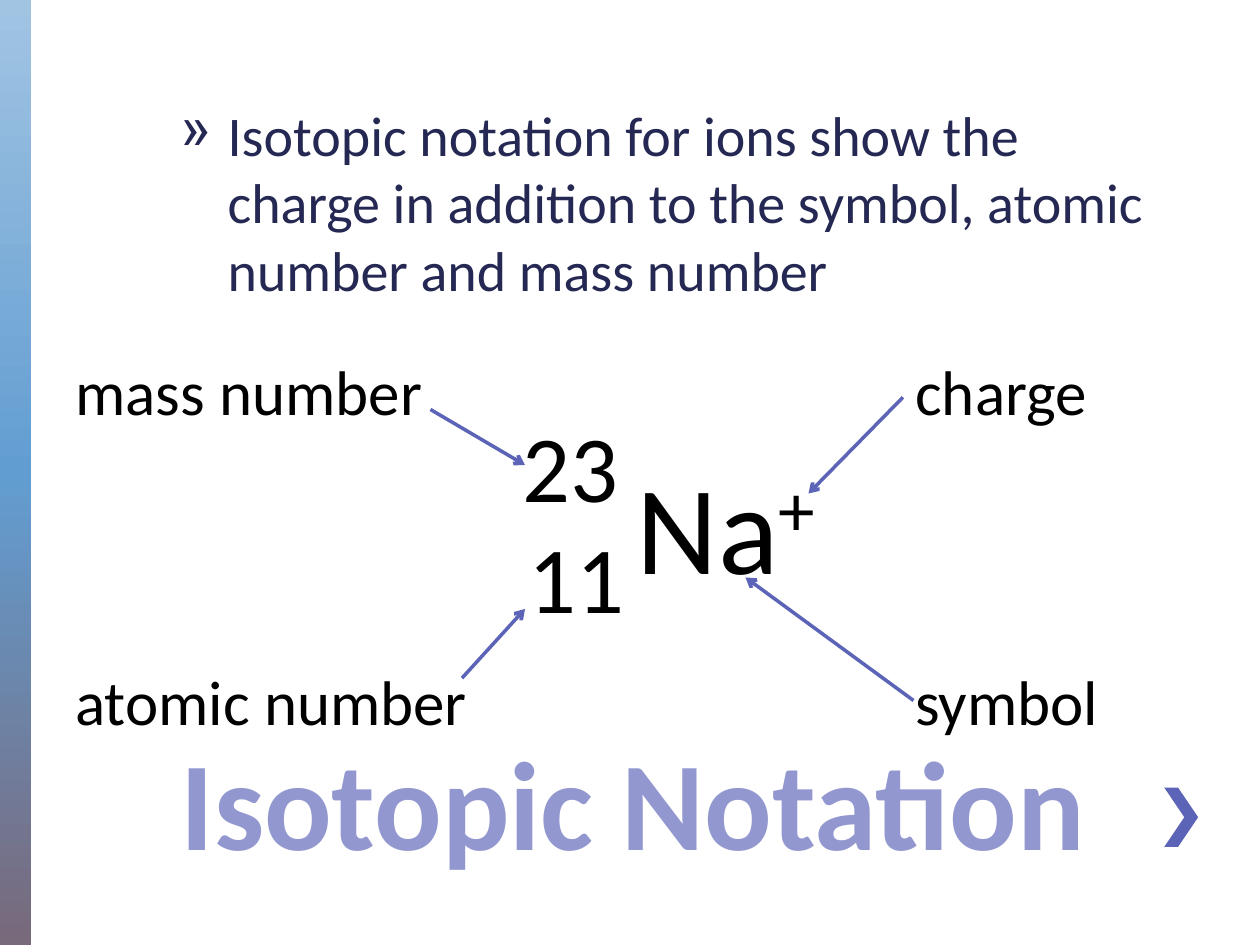
"""Build the Isotopic Notation slide for a sodium ion."""
from copy import deepcopy
from dataclasses import dataclass

from lxml import etree
from pptx import Presentation
from pptx.dml.color import RGBColor
from pptx.enum import shapes as kinds, text as styles
from pptx.oxml.ns import qn
from pptx.util import Pt


@dataclass(frozen=True)
class Theme:
    font: str = "Calibri"
    title: str = "9297CF"
    dark: str = "242852"
    accent: str = "5C64B7"
    black: str = "000000"
    bar: tuple = ((0, "A1C4E3"), (0.5, "629DD1"), (1, "78697B"))
    title_size: int = 72
    body_size: int = 32
    label_size: int = 36
    number_size: int = 54
    symbol_size: int = 72


THEME = Theme()
TITLE = "Isotopic Notation"
BODY = ("Isotopic notation for ions show the charge in addition to the symbol, "
        "atomic number and mass number")
SYMBOL, CHARGE = "Na", "+"
SYMBOL_BOX = (350, 252.7, 129.6, 94.3)
NUMBERS = [("11", (288, 293, 82.8, 72.7)), ("23", (270, 229.7, 112.3, 72.7))]

UPPER, LOWER, LEFT, RIGHT, LABEL_HEIGHT = 198, 375, 36, 516, 51
LABELS = [
    ("symbol", RIGHT, LOWER, 126),
    ("charge", RIGHT, UPPER, 126),
    ("mass number", LEFT, UPPER, 228),
    ("atomic number", LEFT, LOWER, 264),
]
ARROWS = [
    ((522, 400.3), (426, 330)),
    ((516, 227), (462, 282)),
    ((264, 387.5), (300, 348)),
    ((246, 234), (300, 265.7)),
]
CHEVRON = [(673.2, 450), (665.3, 450), (676.8, 467), (665.3, 484), (673.2, 484), (684.7, 467)]


def rgb(value):
    return RGBColor.from_string(value)


def points(values):
    return [Pt(value) for value in values]


def style(paragraph, size, color, bold=False):
    font = paragraph.font
    font.name, font.size, font.bold = THEME.font, Pt(size), bold
    font.color.rgb = rgb(color)


def add_text(shapes, words, box, size, color=THEME.black, align=styles.PP_ALIGN.LEFT,
             fit=styles.MSO_AUTO_SIZE.SHAPE_TO_FIT_TEXT):
    frame = shapes.add_textbox(*points(box)).text_frame
    frame.word_wrap, frame.auto_size = True, fit
    paragraph = frame.paragraphs[0]
    paragraph.add_run().text = words
    paragraph.alignment = align
    style(paragraph, size, color)
    return paragraph


def add_bar(slide):
    bar = slide.shapes.add_shape(kinds.MSO_SHAPE.RECTANGLE, *points((0, 0, 18, 540)))
    bar.shadow.inherit = False
    bar.line.fill.background()
    bar.fill.gradient()
    bar.fill.gradient_angle = 270
    stop_list = bar._element.spPr.find(qn("a:gradFill")).find(qn("a:gsLst"))
    stop_list.append(deepcopy(stop_list[0]))
    for stop, (position, color) in zip(bar.fill.gradient_stops, THEME.bar):
        stop.position, stop.color.rgb = position, rgb(color)


def add_chevron(slide):
    start, *rest = [points(corner) for corner in CHEVRON]
    builder = slide.shapes.build_freeform(*start, scale=1.0)
    builder.add_line_segments(rest, close=True)
    chevron = builder.convert_to_shape()
    chevron.shadow.inherit = False
    chevron.fill.solid()
    chevron.fill.fore_color.rgb = rgb(THEME.accent)
    chevron.line.fill.background()


def add_title(slide):
    title = slide.shapes.title
    title.left, title.top, title.width, title.height = points((96, 414, 570, 90))
    frame = title.text_frame
    frame.text = TITLE
    frame.word_wrap, frame.auto_size = True, styles.MSO_AUTO_SIZE.NONE
    frame.vertical_anchor = styles.MSO_ANCHOR.BOTTOM
    paragraph = frame.paragraphs[0]
    paragraph.alignment = styles.PP_ALIGN.LEFT
    style(paragraph, THEME.title_size, THEME.title, bold=True)
    outline = etree.Element(qn("a:ln"), w=str(Pt(1)))
    fill = etree.SubElement(outline, qn("a:solidFill"))
    etree.SubElement(fill, qn("a:srgbClr"), val=THEME.dark)
    paragraph.runs[0]._r.get_or_add_rPr().insert(0, outline)


def add_body(slide):
    paragraph = add_text(slide.shapes, BODY, (96, 54, 588, 360), THEME.body_size, THEME.dark,
                         fit=styles.MSO_AUTO_SIZE.NONE)
    paragraph.space_before = Pt(0.2 * THEME.body_size)
    properties = paragraph._p.get_or_add_pPr()
    properties.set("marL", str(Pt(27)))
    properties.set("indent", str(Pt(-27)))
    bullet = etree.Element(qn("a:buChar"), char="»")
    properties.find(qn("a:defRPr")).addprevious(bullet)


def add_isotope(slide):
    group = slide.shapes.add_group_shape()
    center = styles.PP_ALIGN.CENTER
    symbol = add_text(group.shapes, SYMBOL, SYMBOL_BOX, THEME.symbol_size, align=center)
    charge = symbol.add_run()
    charge.text = CHARGE
    charge._r.get_or_add_rPr().set("baseline", "30000")
    for number, box in NUMBERS:
        add_text(group.shapes, number, box, THEME.number_size, align=center)


def add_arrow(slide, start, end):
    arrow = slide.shapes.add_connector(kinds.MSO_CONNECTOR.STRAIGHT, *points(start + end))
    arrow.line.width = Pt(2)
    arrow.line.color.rgb = rgb(THEME.accent)
    etree.SubElement(arrow.line._get_or_add_ln(), qn("a:tailEnd"), type="arrow")
    etree.SubElement(arrow._element.spPr, qn("a:effectLst"))


def main():
    presentation = Presentation()
    presentation.slide_width, presentation.slide_height = Pt(720), Pt(540)
    slide = presentation.slides.add_slide(presentation.slide_layouts[5])
    add_bar(slide)
    add_chevron(slide)
    add_title(slide)
    add_body(slide)
    add_isotope(slide)
    for words, left, top, width in LABELS:
        add_text(slide.shapes, words, (left, top, width, LABEL_HEIGHT), THEME.label_size)
    for start, end in ARROWS:
        add_arrow(slide, start, end)
    presentation.save("out.pptx")


if __name__ == "__main__":
    main()
